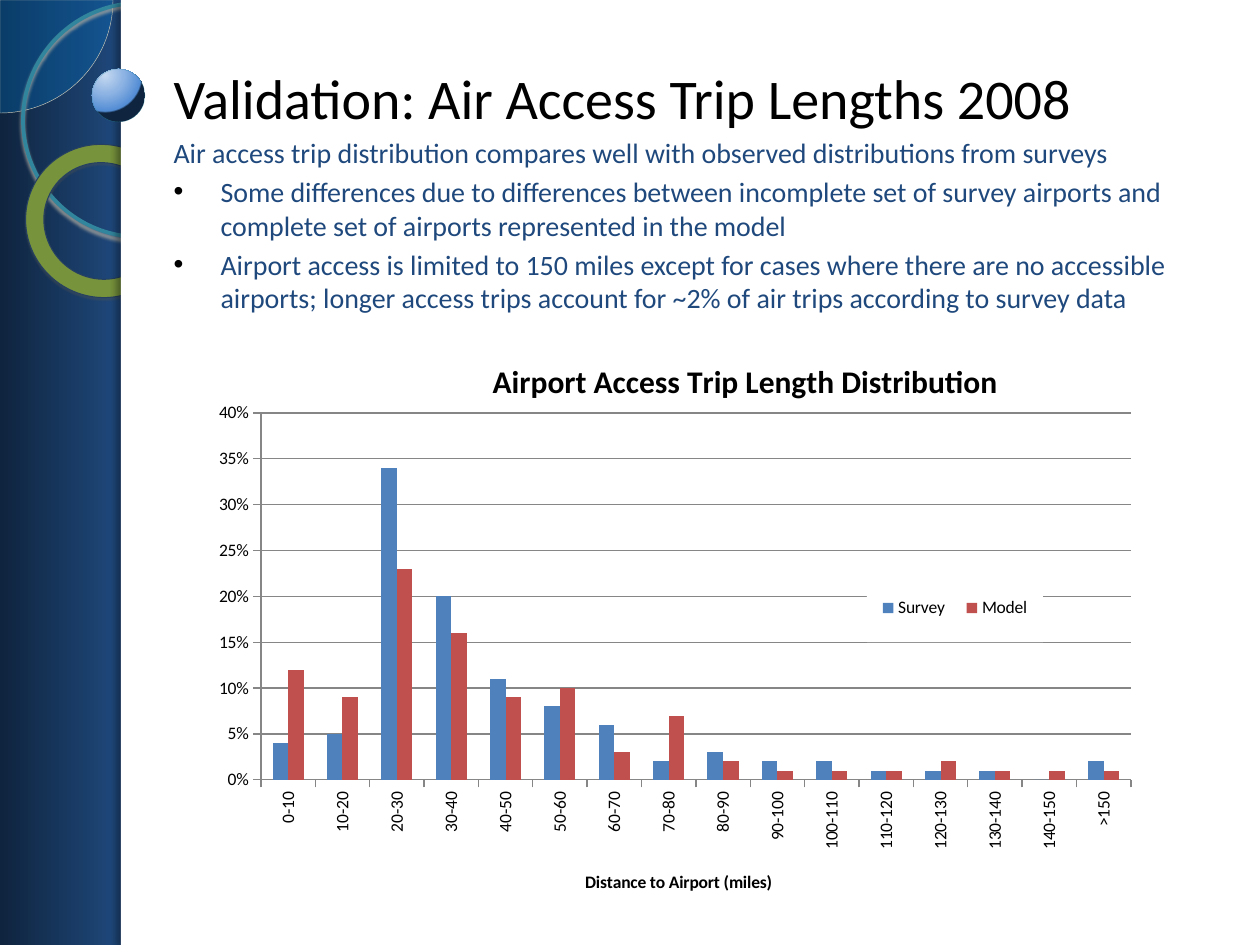
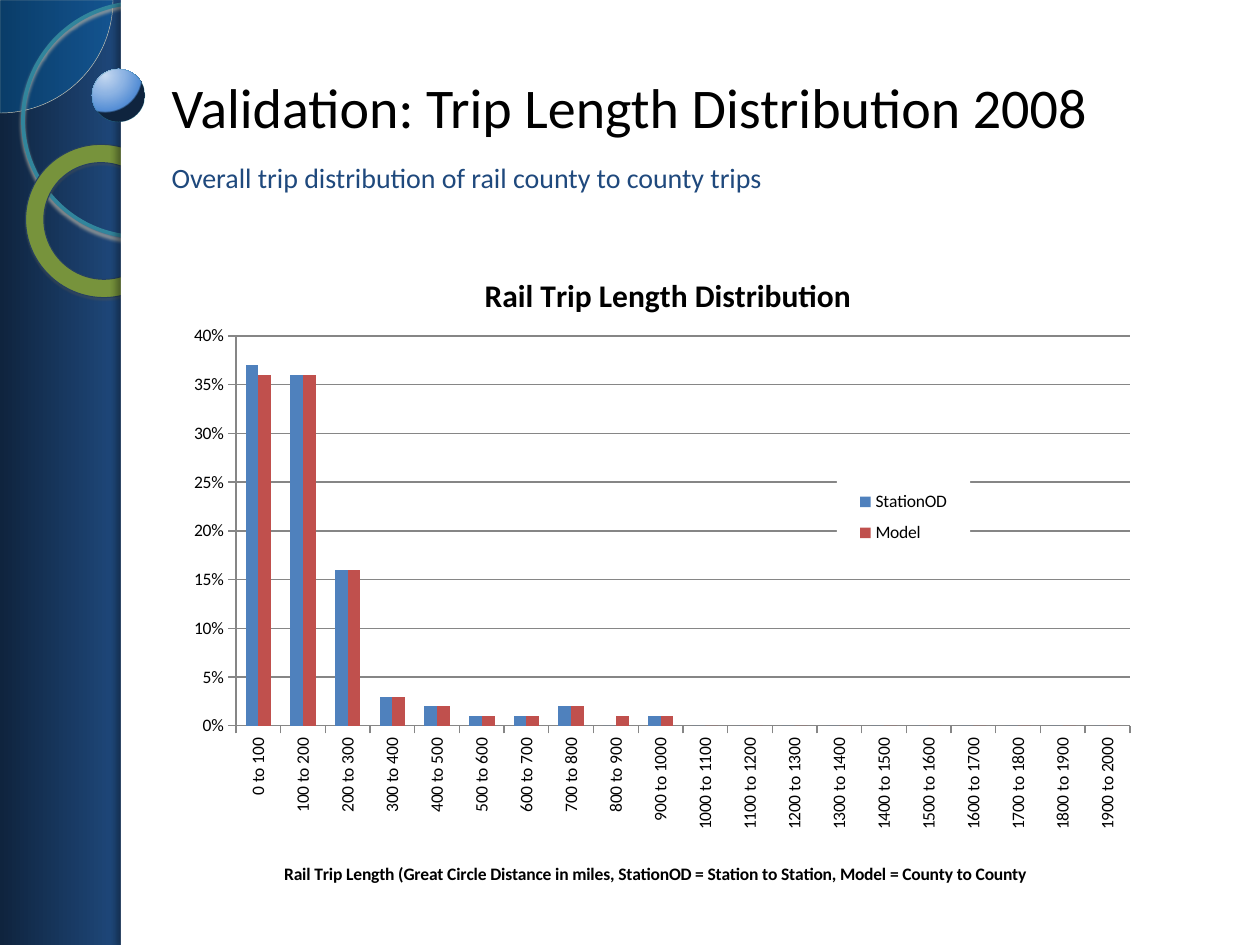
from dataclasses import dataclass

from pptx import Presentation
from pptx.chart.data import CategoryChartData
from pptx.dml.color import RGBColor
from pptx.enum.chart import XL_CHART_TYPE, XL_LEGEND_POSITION, XL_TICK_MARK
from pptx.enum.shapes import MSO_SHAPE
from pptx.enum.text import MSO_ANCHOR, MSO_AUTO_SIZE, PP_ALIGN
from pptx.oxml import parse_xml
from pptx.oxml.ns import nsdecls
from pptx.util import Emu, Pt

RECT, PIE = MSO_SHAPE.RECTANGLE, MSO_SHAPE.PIE
OVAL, DONUT = MSO_SHAPE.OVAL, MSO_SHAPE.DONUT
LEFT, TOP, MIDDLE = PP_ALIGN.LEFT, MSO_ANCHOR.TOP, MSO_ANCHOR.MIDDLE
COLUMNS, LEGEND_RIGHT = XL_CHART_TYPE.COLUMN_CLUSTERED, XL_LEGEND_POSITION.RIGHT
OUTSIDE = XL_TICK_MARK.OUTSIDE

PX = 914400 / 126
PAGE_W, PAGE_H = 1260, 945


@dataclass(frozen=True)
class Theme:
    font: str = "Calibri"
    ink: str = "000000"
    paper: str = "FFFFFF"
    navy: str = "1F497D"
    night: str = "0F243E"
    azure: str = "0070C0"
    sand: str = "D1CEBB"
    teal: str = "31859C"
    olive: str = "77933C"
    olive_edge: str = "254061"
    ball_edge: str = "308EA5"
    ball: tuple = ((0, "C6D9F1"), (50, "8EB4E3"), (95, "558ED5"), (100, "0F243E"))
    grid: str = "868686"
    series: tuple = ("4F81BD", "C0504D")
    title_size: int = 32
    body_size: int = 16
    chart_title_size: int = 18
    label_size: int = 10


THEME = Theme()


def px(length):
    return Emu(round(length * PX))


def rgb(color):
    return RGBColor.from_string(color)


def place(shape, box):
    shape.left, shape.top, shape.width, shape.height = map(px, box)


def write(paragraph, text, *, size, color=THEME.ink, bold=False, align=None, before=None):
    """Put one formatted run into a paragraph."""
    run = paragraph.add_run()
    run.text = text
    run.font.name, run.font.size, run.font.bold = THEME.font, Pt(size), bold
    run.font.color.rgb = rgb(color)
    if align is not None:
        paragraph.alignment = align
    if before is not None:
        paragraph.space_before = Pt(before)


# Shape formatting
def set_alpha(shape, parent, percent):
    color = shape.element.spPr.xpath(f"{parent}/a:srgbClr")[0]
    color.append(parse_xml(f'<a:alpha {nsdecls("a")} val="{percent * 1000}"/>'))


def set_gradient(shape, stops, direction):
    stop_xml = "".join(
        f'<a:gs pos="{pos * 1000}"><a:srgbClr val="{color}"/></a:gs>' for pos, color in stops)
    gradient = parse_xml(
        f'<a:gradFill {nsdecls("a")} rotWithShape="1"><a:gsLst>{stop_xml}</a:gsLst>'
        f"{direction}</a:gradFill>")
    shape.fill.background()
    properties = shape.element.spPr
    properties.replace(properties.xpath("a:noFill")[0], gradient)


def set_shadow(shape, color, alpha, blur, distance, angle):
    shape.element.spPr.xpath("a:effectLst")[0].append(parse_xml(
        f'<a:outerShdw {nsdecls("a")} blurRad="{Pt(blur)}" dist="{Pt(distance)}"'
        f' dir="{angle * 60000}" algn="ctr" rotWithShape="0"><a:srgbClr val="{color}">'
        f'<a:alpha val="{alpha * 1000}"/></a:srgbClr></a:outerShdw>'))


def add_figure(slide, kind, box, fill=None, line=None, line_width=0, shadow=None):
    figure = slide.shapes.add_shape(kind, *map(px, box))
    figure.shadow.inherit = False
    if fill:
        figure.fill.solid()
        figure.fill.fore_color.rgb = rgb(fill)
    else:
        figure.fill.background()
    if line:
        figure.line.color.rgb = rgb(line)
        figure.line.width = Pt(line_width)
    else:
        figure.line.fill.background()
    if shadow:
        set_shadow(figure, *shadow)
    return figure


def decorate_layout(layout, slide):
    """Draw the side band once and hand it to the layout, behind its placeholders."""
    band = add_figure(slide, RECT, (0, 0, 122, PAGE_H))
    set_gradient(band, ((0, THEME.night), (100, THEME.navy)), '<a:lin ang="0" scaled="0"/>')

    quarter = add_figure(slide, PIE, (-113, -113, 226, 226), THEME.azure, THEME.sand, 0.25)
    quarter.adjustments[0], quarter.adjustments[1] = 0, 54
    set_alpha(quarter, "a:solidFill", 33)

    ring = add_figure(slide, OVAL, (23, 3, 234, 234), None, THEME.teal, 2.15,
                      ("B2B0A4", 85, 2, 2, 90))
    donut = add_figure(slide, DONUT, (25, 145, 155, 152), THEME.olive, THEME.olive_edge, 0.58,
                       ("5A5850", 35, 1, 1.2, 75))
    donut.adjustments[0] = 0.12
    donut.rotation = 38.6

    page = add_figure(slide, RECT, (121, 0, PAGE_W - 121, PAGE_H), THEME.paper,
                      shadow=(THEME.ink, 40, 4, 3, 135))

    ball = add_figure(slide, OVAL, (92, 69, 53, 53), None, THEME.ball_edge, 0.16)
    set_gradient(ball, THEME.ball, '<a:path path="circle"><a:fillToRect l="25000" t="12000"'
                                   ' r="75000" b="88000"/></a:path>')
    set_alpha(ball, "a:ln/a:solidFill", 60)

    for order, figure in enumerate((band, quarter, ring, donut, page, ball)):
        figure.element.nvSpPr.cNvPr.set("id", str(100 + order))
        layout.shapes.element.insert(2 + order, figure.element)


# Placeholders
def prepare_frame(placeholder, box, anchor):
    place(placeholder, box)
    frame = placeholder.text_frame
    frame.word_wrap, frame.auto_size = True, MSO_AUTO_SIZE.NONE
    frame.vertical_anchor = anchor
    return frame


def fill_title(slide, text, box):
    frame = prepare_frame(slide.shapes.title, box, MIDDLE)
    write(frame.paragraphs[0], text, size=THEME.title_size, align=LEFT)


def set_bullet(paragraph, bulleted):
    properties = paragraph._p.get_or_add_pPr()
    indent = px(47) if bulleted else 0
    properties.set("marL", str(indent))
    properties.set("indent", str(-indent))
    marks = (f'<a:buClr {nsdecls("a")}><a:srgbClr val="{THEME.ink}"/></a:buClr>',
             f'<a:buFont {nsdecls("a")} typeface="Arial"/>',
             f'<a:buChar {nsdecls("a")} char="•"/>')
    for mark in marks if bulleted else (f'<a:buNone {nsdecls("a")}/>',):
        properties.append(parse_xml(mark))


def fill_body(slide, lead, bullets, box):
    frame = prepare_frame(slide.placeholders[1], box, TOP)
    for index, text in enumerate((lead, *bullets)):
        paragraph = frame.add_paragraph() if index else frame.paragraphs[0]
        write(paragraph, text, size=THEME.body_size, color=THEME.navy, align=LEFT, before=3.2)
        set_bullet(paragraph, bulleted=index > 0)


# Charts
def set_layout(part, index, chart_box, box, target=""):
    """Fix a chart part at a px position on the slide; width and height are optional."""
    left, top, width, height = chart_box
    shares = [(box[0] - left) / width, (box[1] - top) / height]
    if len(box) == 4:
        shares += [box[2] / width, box[3] / height]
    modes = '<c:xMode val="edge"/><c:yMode val="edge"/>'
    sizes = "".join(f'<c:{key} val="{share:.4f}"/>' for key, share in zip("xywh", shares))
    for old in part.xpath("c:layout"):
        part.remove(old)
    part.insert(index, parse_xml(
        f'<c:layout {nsdecls("c")}><c:manualLayout>{target}{modes}{sizes}'
        f"</c:manualLayout></c:layout>"))


def style_axis(axis):
    axis.major_tick_mark = OUTSIDE
    axis.format.line.color.rgb = rgb(THEME.grid)
    axis.tick_labels.font.size = Pt(THEME.label_size)


def add_distribution(slide, box, title, axis_title, categories, series,
                     plot_box, title_at, axis_title_at, legend_box):
    data = CategoryChartData(number_format="0%")
    data.categories = categories
    for name, shares in series.items():
        data.add_series(name, shares)
    chart = slide.shapes.add_chart(COLUMNS, *map(px, box), data).chart
    chart.font.name, chart.font.size = THEME.font, Pt(THEME.label_size)
    chart.font.color.rgb = rgb(THEME.ink)

    bars = chart.plots[0]
    bars.gap_width, bars.overlap, bars.vary_by_categories = 150, 0, False
    for group, color in zip(bars.series, THEME.series):
        group.invert_if_negative = False
        group.format.fill.solid()
        group.format.fill.fore_color.rgb = rgb(color)

    distance, share = chart.category_axis, chart.value_axis
    style_axis(distance)
    style_axis(share)
    share.minimum_scale, share.maximum_scale, share.major_unit = 0, 0.4, 0.05
    share.major_gridlines.format.line.color.rgb = rgb(THEME.grid)
    share.tick_labels.number_format = "0%"
    share.tick_labels.number_format_is_linked = False

    write(chart.chart_title.text_frame.paragraphs[0], title,
          size=THEME.chart_title_size, bold=True)
    write(distance.axis_title.text_frame.paragraphs[0], axis_title,
          size=THEME.label_size, bold=True)

    chart.has_legend = True
    chart.legend.position = LEGEND_RIGHT
    chart.legend.include_in_layout = True
    chart.legend.font.size = Pt(THEME.label_size)

    # Upright labels, legend background and fixed positions
    def find(query):
        return chart.element.xpath(query)[0]

    find(".//c:catAx/c:txPr/a:bodyPr").set("rot", "-5400000")
    find(".//c:legend/c:txPr").addprevious(parse_xml(
        f'<c:spPr {nsdecls("c", "a")}><a:solidFill><a:srgbClr val="{THEME.paper}"/>'
        f"</a:solidFill></c:spPr>"))
    set_layout(find("c:chart/c:plotArea"), 0, box, plot_box, '<c:layoutTarget val="inner"/>')
    set_layout(find("c:chart/c:title"), 1, box, title_at)
    set_layout(find(".//c:catAx/c:title"), 1, box, axis_title_at)
    set_layout(find(".//c:legend"), 1, box, legend_box)


def build_air_access(slide):
    fill_title(slide, "Validation: Air Access Trip Lengths 2008", (161, 0, 1055, 195))
    fill_body(
        slide,
        "Air access trip distribution compares well with observed distributions from surveys",
        ("Some differences due to differences between incomplete set of survey airports and "
         "complete set of airports represented in the model",
         "Airport access is limited to 150 miles except for cases where there are no accessible "
         "airports; longer access trips account for ~2% of air trips according to survey data"),
        (161, 129, 1032, 81))
    add_distribution(
        slide, (200, 323, 950, 592),
        "Airport Access Trip Length Distribution", "Distance to Airport (miles)",
        [f"{start}-{start + 10}" for start in range(0, 150, 10)] + [">150"],
        {"Survey": (0.04, 0.05, 0.34, 0.2, 0.11, 0.08, 0.06, 0.02,
                    0.03, 0.02, 0.02, 0.01, 0.01, 0.01, 0, 0.02),
         "Model": (0.12, 0.09, 0.23, 0.16, 0.09, 0.1, 0.03, 0.07,
                   0.02, 0.01, 0.01, 0.01, 0.02, 0.01, 0.01, 0.01)},
        plot_box=(261, 413, 870, 367), title_at=(487, 354),
        axis_title_at=(582, 867), legend_box=(867, 574, 176, 68))


def build_rail(slide):
    fill_title(slide, "Validation: Trip Length Distribution 2008", (159, 9, 1055, 195))
    fill_body(slide, "Overall trip distribution of rail county to county trips", (),
              (159, 154, 1032, 54))
    leading = (0.16, 0.03, 0.02, 0.01, 0.01, 0.02)
    add_distribution(
        slide, (175, 236, 974, 660),
        "Rail Trip Length Distribution",
        "Rail Trip Length (Great Circle Distance in miles, "
        "StationOD = Station to Station, Model = County to County ",
        [f"{start} to {start + 100}" for start in range(0, 2000, 100)],
        {"StationOD": (0.37, 0.36, *leading, 0, 0.01, *[0] * 10),
         "Model": (0.36, 0.36, *leading, 0.01, 0.01, *[0] * 10)},
        plot_box=(236, 336, 894, 390), title_at=(479, 268),
        axis_title_at=(281, 859), legend_box=(837, 481, 133, 73))


def main():
    deck = Presentation()
    deck.slide_width, deck.slide_height = px(PAGE_W), px(PAGE_H)
    layout = deck.slide_layouts[1]
    air_access, rail = (deck.slides.add_slide(layout) for _ in range(2))
    decorate_layout(layout, air_access)
    build_air_access(air_access)
    build_rail(rail)
    deck.save("out.pptx")


if __name__ == "__main__":
    main()
